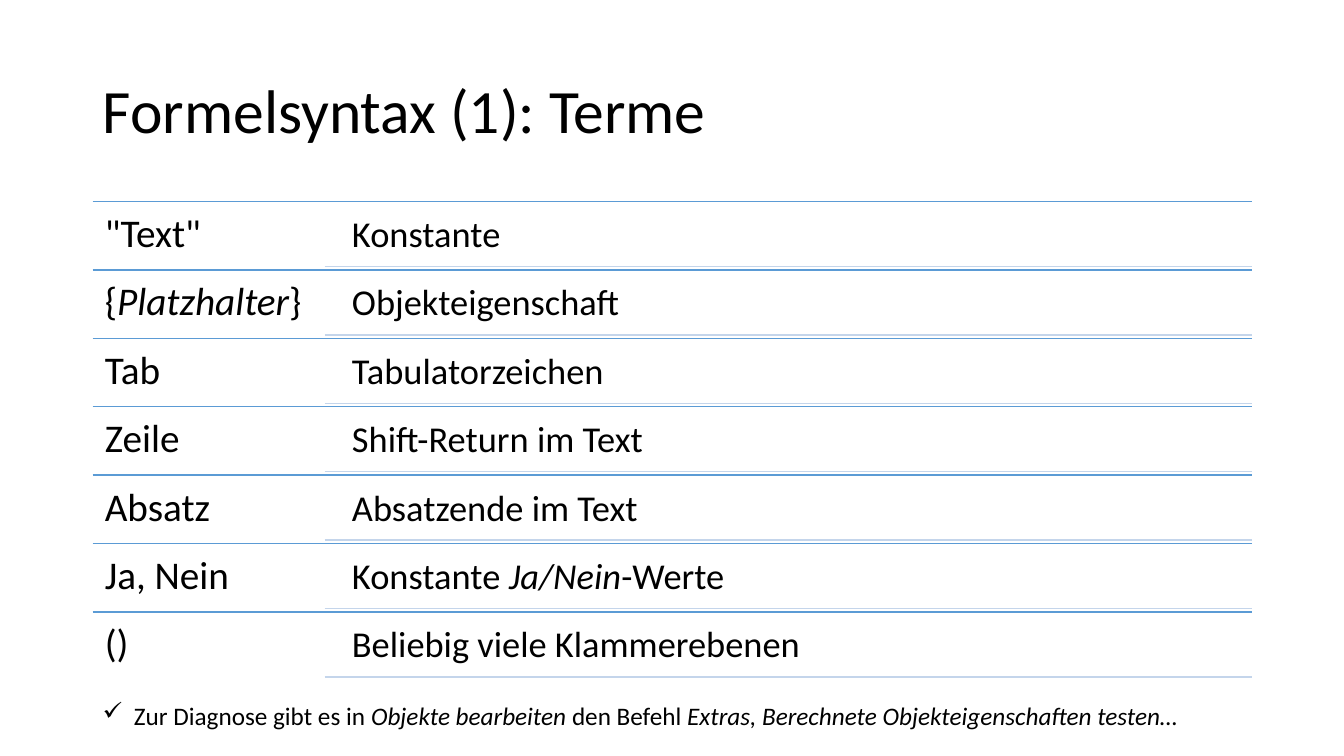
import pptx
import pptx.dml.color
import pptx.enum.shapes
import pptx.enum.text
import pptx.oxml
import pptx.oxml.ns
import pptx.util

COLORS = {"text": "000000", "rule": "5B9BD5", "subrule": "C4D5EB"}
TERMS = [
    ('"Text"', "Konstante"),
    ("{*Platzhalter*}", "Objekteigenschaft"),
    ("Tab", "Tabulatorzeichen"),
    ("Zeile", "Shift-Return im Text"),
    ("Absatz", "Absatzende im Text"),
    ("Ja, Nein", "Konstante *Ja/Nein*-Werte"),
    ("()", "Beliebig viele Klammerebenen"),
]
TITLE = "Formelsyntax (1): Terme"
NOTE = ("Zur Diagnose gibt es in *Objekte bearbeiten* den Befehl "
        "*Extras, Berechnete Objekteigenschaften testen…*")


class TermSlide:
    """Places elements on a grid of 5 columns whose row 0 is the first term."""
    FONT = "Calibri"
    LEFT, TOP = 0.92, 2.0
    COLUMN, ROW = 11.5 / 5, 4.75 / 7
    COLUMNS = 5

    def __init__(self, prs):
        self.slide = prs.slides.add_slide(prs.slide_layouts[5])

    def x(self, col):
        return pptx.util.Inches(self.LEFT + col * self.COLUMN)

    def y(self, row):
        return pptx.util.Inches(self.TOP + row * self.ROW)

    def box(self, col, row, cols, rows):
        left, top = self.x(col), self.y(row)
        return left, top, self.x(col + cols) - left, self.y(row + rows) - top

    def color(self, name):
        return pptx.dml.color.RGBColor.from_string(COLORS[name])

    def add_runs(self, p, text, size):
        """Fills a paragraph; parts between asterisks become italic."""
        for i, part in enumerate(text.split("*")):
            if part:
                r = p.add_run()
                r.text = part
                r.font.name = self.FONT
                r.font.size = pptx.util.Pt(size)
                r.font.italic = i % 2 == 1
                r.font.color.rgb = self.color("text")

    def title(self, text, row, rows):
        sp = self.slide.shapes.title
        sp.left, sp.top, sp.width, sp.height = self.box(0, row, self.COLUMNS, rows)
        tf = sp.text_frame
        tf.word_wrap = True
        tf.auto_size = pptx.enum.text.MSO_AUTO_SIZE.NONE
        tf.vertical_anchor = pptx.enum.text.MSO_ANCHOR.MIDDLE
        p = tf.paragraphs[0]
        p.alignment = pptx.enum.text.PP_ALIGN.LEFT
        p.line_spacing = 0.9
        self.add_runs(p, text, 44)

    def text(self, text, size, col, row, cols, rows, inset=None, bullet=None):
        sp = self.slide.shapes.add_textbox(*self.box(col, row, cols, rows))
        tf = sp.text_frame
        tf.word_wrap = True
        p = tf.paragraphs[0]
        if inset:
            tf.margin_left = tf.margin_right = pptx.util.Inches(inset)
            tf.margin_top = tf.margin_bottom = pptx.util.Inches(inset)
            p.line_spacing = 0.9
        if bullet:
            indent = pptx.util.Inches(0.31)
            pPr = p._p.get_or_add_pPr()
            pPr.set("marL", str(indent))
            pPr.set("indent", str(-indent))
            pPr.append(pptx.oxml.parse_xml(
                f'<a:buChar {pptx.oxml.ns.nsdecls("a")} char="{bullet}"/>'))
        self.add_runs(p, text, size)

    def rule(self, color, col, row):
        """Draws a horizontal line from a column to the right edge of the grid."""
        y = self.y(row)
        line = self.slide.shapes.add_connector(
            pptx.enum.shapes.MSO_CONNECTOR.STRAIGHT,
            self.x(col), y, self.x(self.COLUMNS), y)
        line.line.color.rgb = self.color(color)
        line.line.width = pptx.util.Pt(1)
        line._element.spPr.append(pptx.oxml.parse_xml(
            f'<a:effectLst {pptx.oxml.ns.nsdecls("a")}/>'))

    def term(self, row, name, meaning):
        self.rule("rule", 0, row)
        self.text(name, 28, 0, row, 1, 1, inset=0.12)
        self.text(meaning, 26, 1.07, row + 0.05, 3.93, 0.9, inset=0.11)
        self.rule("subrule", 1, row + 0.95)


def main():
    prs = pptx.Presentation()
    prs.slide_width = pptx.util.Inches(13.33)
    prs.slide_height = pptx.util.Inches(7.5)
    s = TermSlide(prs)
    s.title(TITLE, -2.36, 2.14)
    s.text(NOTE, 18, 0, 7.22, s.COLUMNS, 0.6, bullet="✓")
    for row, (name, meaning) in enumerate(TERMS):
        s.term(row, name, meaning)
    prs.save("out.pptx")


if __name__ == "__main__":
    main()
